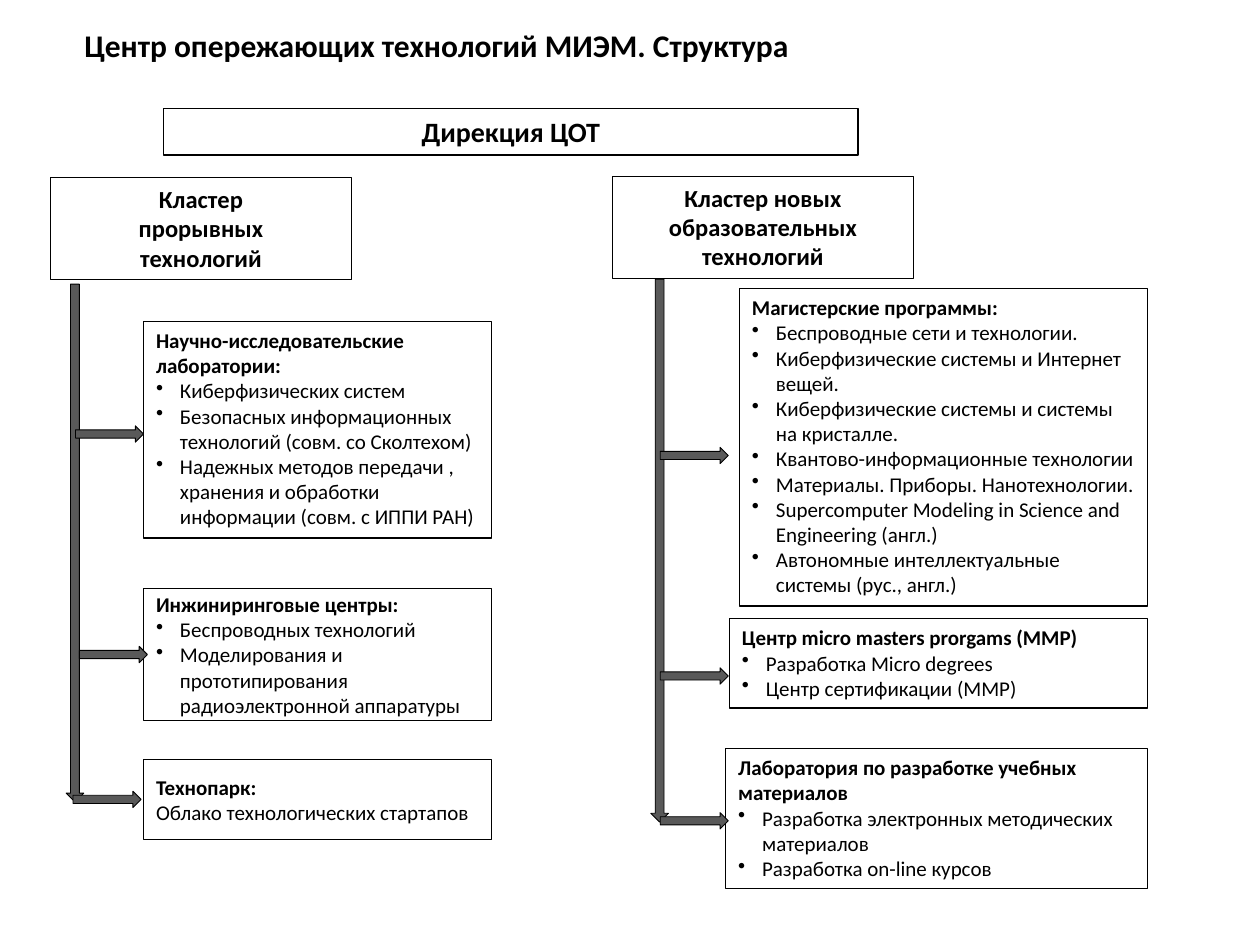
from dataclasses import dataclass

from pptx import Presentation
from pptx.dml.color import RGBColor
from pptx.enum.shapes import MSO_SHAPE as Shape
from pptx.enum.text import MSO_ANCHOR as Anchor, PP_ALIGN as Align
from pptx.oxml.xmlchemy import OxmlElement
from pptx.util import Pt

PX = 9144  # 100 px to the inch
BLACK = RGBColor(0x00, 0x00, 0x00)
GRAY = RGBColor(0x59, 0x59, 0x59)
FONT = "Calibri"
INDENT = 19
BRANCH_W, BRANCH_H = 54, 13
TRUNK_H = 14


@dataclass(frozen=True)
class Heading:
    text: str
    x: int
    y: int
    w: int
    h: int
    size: int


@dataclass(frozen=True)
class Unit:
    title: str
    items: tuple[str, ...]
    x: int
    y: int
    w: int
    h: int
    line: float = 0.75
    bulleted: bool = True
    anchor: Anchor = Anchor.TOP


@dataclass(frozen=True)
class Trunk:
    """Vertical arrow with the top left corners of its branches."""
    x: int
    y: int
    length: int
    branches: tuple[tuple[int, int], ...]


HEADINGS = (
    Heading("Дирекция ЦОТ", 130, 86, 551, 37, 16),
    Heading("Кластер\nпрорывных\nтехнологий", 40, 141, 239, 81, 14),
    Heading("Кластер новых образовательных технологий", 486, 140, 239, 81, 14),
)

UNITS = (
    Unit("Научно-исследовательские лаборатории:", (
        "Киберфизических систем",
        "Безопасных информационных технологий (совм. со Сколтехом)",
        "Надежных методов передачи , хранения и обработки информации (совм. с ИППИ РАН)",
    ), 114, 255, 276, 172),
    Unit("Инжиниринговые центры:", (
        "Беспроводных технологий",
        "Моделирования и прототипирования радиоэлектронной аппаратуры",
    ), 114, 467, 276, 105, line=0.25, anchor=Anchor.MIDDLE),
    Unit("Технопарк:", ("Облако технологических стартапов",),
         114, 603, 276, 63, line=0.25, bulleted=False, anchor=Anchor.MIDDLE),
    Unit("Магистерские программы:", (
        "Беспроводные сети и технологии.",
        "Киберфизические системы и Интернет вещей.",
        "Киберфизические системы и системы на кристалле.",
        "Квантово-информационные технологии",
        "Материалы. Приборы. Нанотехнологии.",
        "Supercomputer Modeling in Science and Engineering (англ.)",
        "Автономные интеллектуальные системы (рус., англ.)",
    ), 587, 229, 324, 252),
    Unit("Центр micro masters prorgams (MMP)", (
        "Разработка Micro degrees",
        "Центр сертификации (MMP)",
    ), 579, 491, 332, 71),
    Unit("Лаборатория по разработке учебных материалов", (
        "Разработка электронных методических материалов",
        "Разработка on-line курсов",
    ), 576, 594, 335, 111),
)

TRUNKS = (
    Trunk(52, 226, 411, ((60, 338), (63, 513), (58, 628))),
    Trunk(516, 222, 431, ((524, 355), (524, 530), (524, 645))),
)


def style_text(p, size: int, bold: bool) -> None:
    for r in p.runs:
        r.font.name = FONT
        r.font.size = Pt(size)
        r.font.bold = bold
        r.font.color.rgb = BLACK


def add_bullet(p) -> None:
    pPr = p._p.get_or_add_pPr()
    pPr.set("marL", str(INDENT * PX))
    pPr.set("indent", str(-INDENT * PX))
    bullet = OxmlElement("a:buChar")
    bullet.set("char", "•")
    pPr.append(bullet)


def add_box(s, x: int, y: int, w: int, h: int, line: float, anchor: Anchor):
    """Add an outlined rectangle and return its text frame."""
    sp = s.shapes.add_shape(Shape.RECTANGLE, x * PX, y * PX, w * PX, h * PX)
    sp.shadow.inherit = False
    sp.fill.background()
    sp.line.color.rgb = BLACK
    sp.line.width = Pt(line)
    tf = sp.text_frame
    tf.word_wrap = True
    tf.vertical_anchor = anchor
    return tf


def add_heading(s, heading: Heading) -> None:
    tf = add_box(s, heading.x, heading.y, heading.w, heading.h, 0.75, Anchor.TOP)
    tf.text = heading.text
    for p in tf.paragraphs:
        p.alignment = Align.CENTER
        style_text(p, heading.size, True)


def add_unit(s, unit: Unit) -> None:
    tf = add_box(s, unit.x, unit.y, unit.w, unit.h, unit.line, unit.anchor)
    tf.text = "\n".join((unit.title, *unit.items))
    for i, p in enumerate(tf.paragraphs):
        p.alignment = Align.LEFT
        if i and unit.bulleted:
            add_bullet(p)
        style_text(p, 12, i == 0)


def add_arrow(s, x: int, y: int, w: int, h: int):
    sp = s.shapes.add_shape(Shape.RIGHT_ARROW, x * PX, y * PX, w * PX, h * PX)
    sp.shadow.inherit = False
    sp.fill.solid()
    sp.fill.fore_color.rgb = GRAY
    sp.line.color.rgb = BLACK
    sp.line.width = Pt(0.5)
    return sp


def add_trunk(s, trunk: Trunk) -> None:
    # A quarter turn keeps the centre, so the unturned arrow is offset from it.
    shift = (trunk.length - TRUNK_H) // 2
    sp = add_arrow(s, trunk.x - shift, trunk.y + shift, trunk.length, TRUNK_H)
    sp.rotation = 90
    for x, y in trunk.branches:
        add_arrow(s, x, y, BRANCH_W, BRANCH_H)


def add_title(s, text: str) -> None:
    sp = s.shapes.add_textbox(51 * PX, 14 * PX, 647 * PX, 43 * PX)
    tf = sp.text_frame
    tf.word_wrap = True
    tf.vertical_anchor = Anchor.MIDDLE
    tf.margin_left = 16 * PX
    tf.margin_right = 0
    tf.text = text
    style_text(tf.paragraphs[0], 18, True)


def main() -> None:
    prs = Presentation()
    prs.slide_width, prs.slide_height = 1000 * PX, 750 * PX
    s = prs.slides.add_slide(prs.slide_layouts[6])
    add_title(s, "Центр опережающих технологий МИЭМ. Структура")
    for heading in HEADINGS:
        add_heading(s, heading)
    for unit in UNITS:
        add_unit(s, unit)
    for trunk in TRUNKS:
        add_trunk(s, trunk)
    prs.save("out.pptx")


if __name__ == "__main__":
    main()
